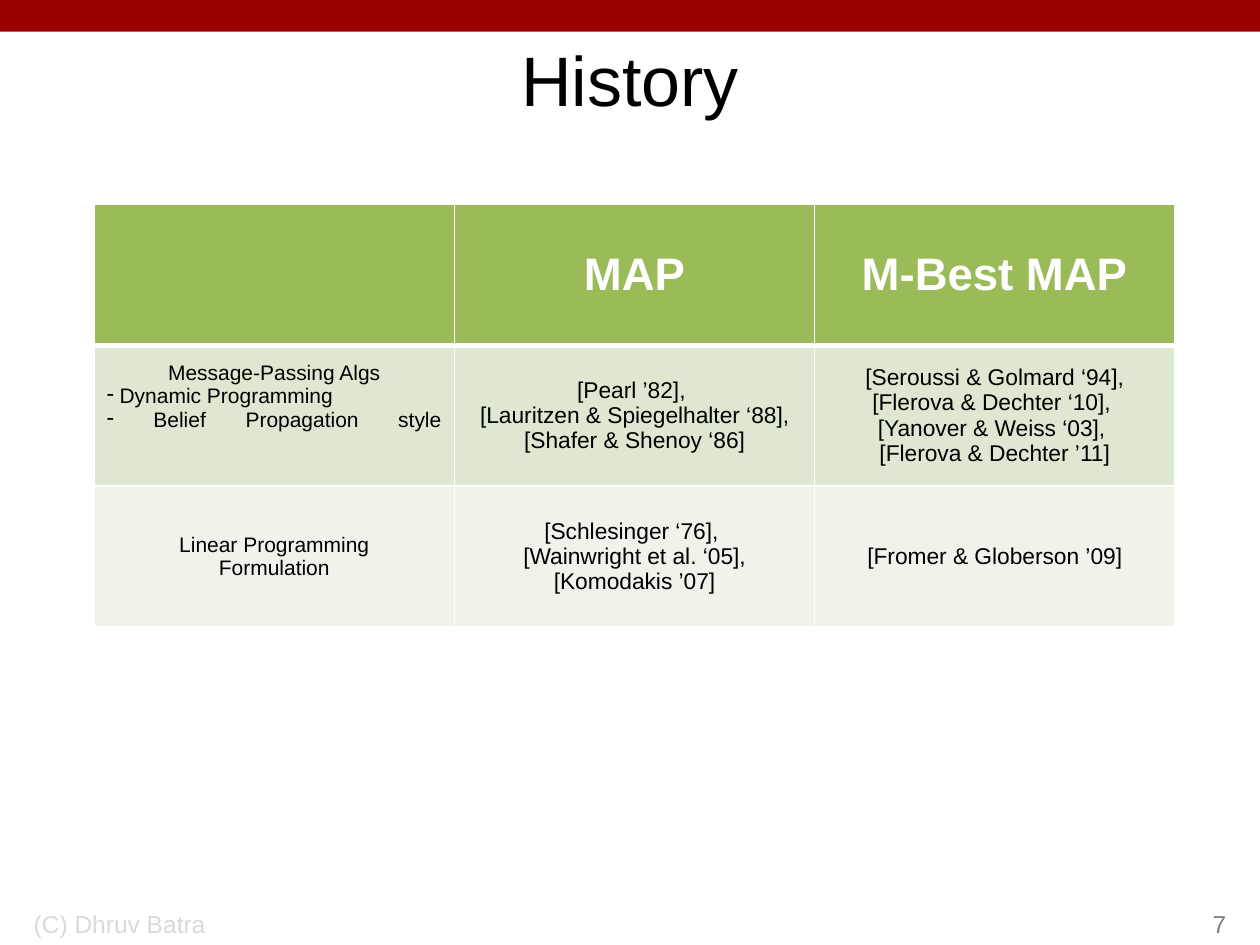
from lxml import etree
from pptx import Presentation
from pptx import util as u
from pptx.dml.color import RGBColor
from pptx.enum import shapes, text
from pptx.oxml.ns import qn

LEFT, CENTER = text.PP_ALIGN.LEFT, text.PP_ALIGN.CENTER
RIGHT, JUSTIFY = text.PP_ALIGN.RIGHT, text.PP_ALIGN.JUSTIFY


def color(value):
    return RGBColor.from_string(value)


def write(paragraph, content, size, ink, align, bold=False):
    paragraph.alignment = align
    for index, line in enumerate(content.split("\n")):
        if index:
            paragraph.add_line_break()
        if line:
            run = paragraph.add_run()
            run.text = line
            run.font.name = "Arial"
            run.font.size = u.Pt(size)
            run.font.bold = bold
            run.font.color.rgb = color(ink)


presentation = Presentation()
presentation.slide_width, presentation.slide_height = u.Cm(25.4), u.Cm(19.05)
slide = presentation.slides.add_slide(presentation.slide_layouts[6])

# Red band along the top
band = slide.shapes.add_shape(
    shapes.MSO_SHAPE.RECTANGLE, 0, 0, presentation.slide_width, u.Cm(0.64))
band.shadow.inherit = False
band.fill.solid()
band.fill.fore_color.rgb = color("990000")
band.line.fill.background()

# Title, footer and page number
MIDDLE, BOTTOM = text.MSO_ANCHOR.MIDDLE, text.MSO_ANCHOR.BOTTOM
labels = [
    ("History", 1.9, 0.64, 21.6, 1.9, 40, "000000", CENTER, MIDDLE),
    ("(C) Dhruv Batra", 0.43, 17.78, 8.05, 1.27, 14, "D9D9D9", LEFT, BOTTOM),
    ("7", 19.69, 17.78, 5.28, 1.27, 14, "808080", RIGHT, BOTTOM),
]
for content, left, top, width, height, size, ink, align, anchor in labels:
    box = slide.shapes.add_textbox(u.Cm(left), u.Cm(top), u.Cm(width), u.Cm(height))
    box.text_frame.word_wrap = True
    box.text_frame.vertical_anchor = anchor
    write(box.text_frame.paragraphs[0], content, size, ink, align)

# Table of methods: each cell is a list of paragraphs
rows = [
    [[], ["MAP"], ["M-Best MAP"]],
    [["Message-Passing Algs", "- Dynamic Programming", "- Belief Propagation style\n"],
     ["[Pearl ’82], \n[Lauritzen & Spiegelhalter ‘88], [Shafer & Shenoy ‘86]"],
     ["[Seroussi & Golmard ‘94], [Flerova & Dechter ‘10], \n"
      "[Yanover & Weiss ‘03], \n[Flerova & Dechter ’11]"]],
    [["Linear Programming\nFormulation"],
     ["[Schlesinger ‘76], \n[Wainwright et al. ‘05], [Komodakis ’07]"],
     ["[Fromer & Globerson ’09]"]],
]
fills = ["9BBB59", "DEE7D1", "EFF3EA"]
column_width, row_height = u.Cm(7.26), u.Cm(2.84)
table = slide.shapes.add_table(
    3, 3, u.Cm(1.9), u.Cm(4.12), column_width * 3, row_height * 3).table
for column in table.columns:
    column.width = column_width

for row_index, row in enumerate(rows):
    table.rows[row_index].height = row_height
    header = row_index == 0
    for column_index, paragraphs in enumerate(row):
        cell = table.cell(row_index, column_index)
        cell.vertical_anchor = MIDDLE

        # White borders, thicker below the header
        properties = cell._tc.get_or_add_tcPr()
        for side in ("L", "R", "T", "B"):
            thick = (header and side == "B") or (row_index == 1 and side == "T")
            line = etree.SubElement(
                properties, qn(f"a:ln{side}"), w=str(u.Pt(3 if thick else 1)))
            line_fill = etree.SubElement(line, qn("a:solidFill"))
            etree.SubElement(line_fill, qn("a:srgbClr"), val="FFFFFF")
        cell.fill.solid()
        cell.fill.fore_color.rgb = color(fills[row_index])

        # Text, with dashes as real bullets
        size = 26 if header else 12 if column_index == 0 else 13
        ink = "FFFFFF" if header else "000000"
        for index, content in enumerate(paragraphs):
            frame = cell.text_frame
            paragraph = frame.add_paragraph() if index else frame.paragraphs[0]
            bulleted = content.startswith("-")
            write(paragraph, content.removeprefix("-"), size, ink,
                  JUSTIFY if bulleted else CENTER, header)
            if bulleted:
                etree.SubElement(
                    paragraph._p.get_or_add_pPr(), qn("a:buChar"), char="-")

presentation.save("out.pptx")
